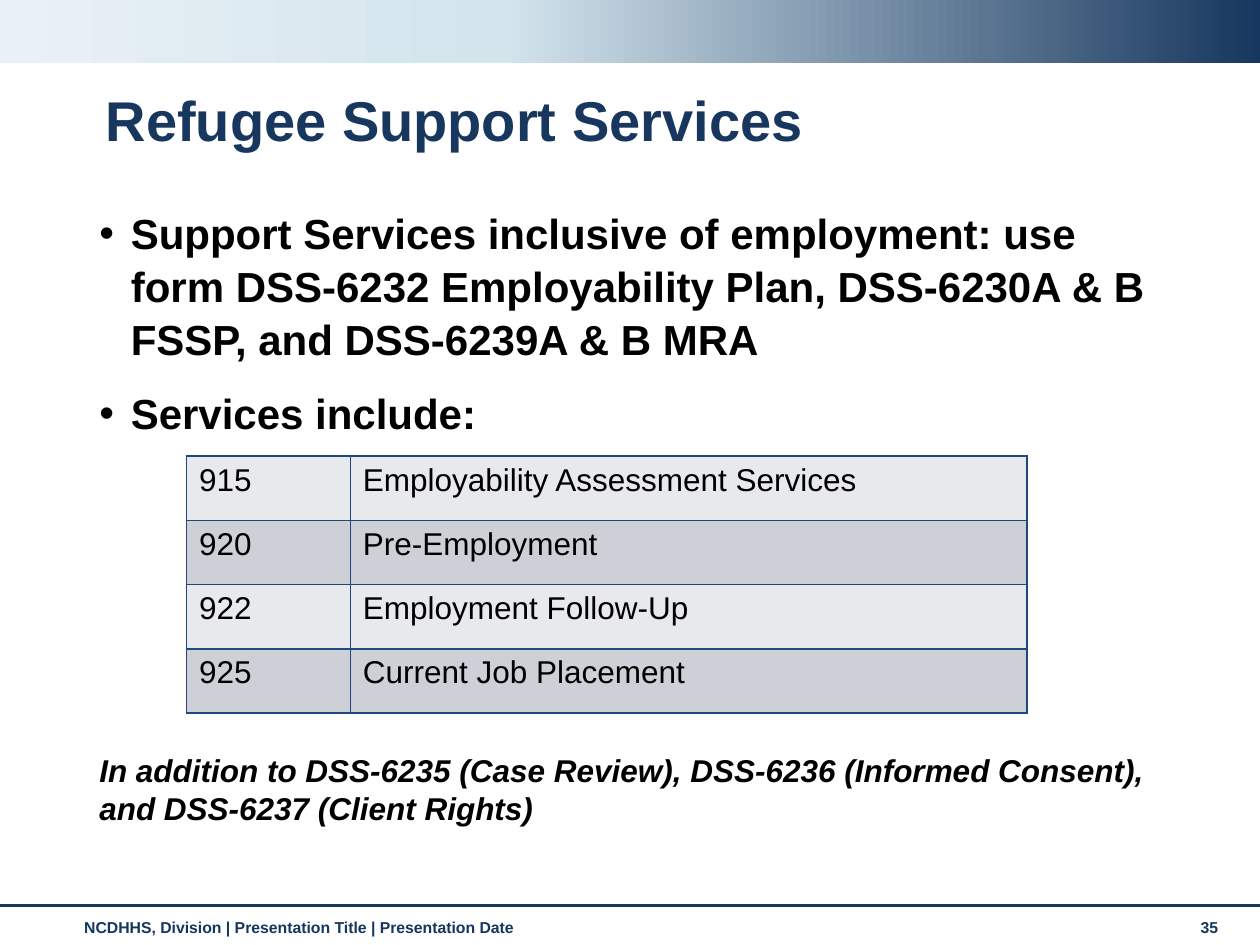
from lxml import etree
from pptx import Presentation
from pptx.dml.color import RGBColor
from pptx.enum.shapes import MSO_CONNECTOR as CONN, MSO_SHAPE as SHAPE
from pptx.enum.text import MSO_ANCHOR as ANCHOR
from pptx.oxml.ns import qn
from pptx.util import Inches, Pt

NAVY, BLACK = "17375E", "000000"
FOOTER_COLOR, BORDER = "15365E", "1F497D"
BAND_STOPS = [(0, "E9F1F6"), (40, "D3E4ED"), (100, NAVY)]
ROW_FILLS = ["E8E9EC", "CDD0D7"]

BULLETS = [
    "Support Services inclusive of employment: use form DSS-6232 "
    "Employability Plan, DSS-6230A & B FSSP, and DSS-6239A & B MRA",
    "Services include:",
]
SERVICES = [
    ("915", "Employability Assessment Services"),
    ("920", "Pre-Employment"),
    ("922", "Employment Follow-Up"),
    ("925", "Current Job Placement"),
]
NOTE = ("In addition to DSS-6235 (Case Review), DSS-6236 (Informed Consent), "
        "and DSS-6237 (Client Rights)")


def rgb(color):
    return RGBColor.from_string(color)


def inches(box):
    return [Inches(v) for v in box]


def sub(parent, tag, **attrs):
    return etree.SubElement(parent, qn(tag), attrs)


def write(p, text, color, **font):
    r = p.add_run()
    r.text = text
    r.font.color.rgb = rgb(color)
    for name, value in {"name": "Arial", **font}.items():
        setattr(r.font, name, value)


def add_text(slide, box, paragraphs, color, anchor=ANCHOR.TOP, spacing=1.0, **font):
    tf = slide.shapes.add_textbox(*inches(box)).text_frame
    tf.word_wrap = True
    tf.vertical_anchor = anchor
    for i, text in enumerate(paragraphs):
        p = tf.add_paragraph() if i else tf.paragraphs[0]
        p.line_spacing = spacing
        write(p, text, color, **font)
    return tf


def add_band(slide, box):
    sp = slide.shapes.add_shape(SHAPE.RECTANGLE, *inches(box))
    sp.shadow.inherit = False
    sp.line.fill.background()
    sp.fill.gradient()
    sp.fill.gradient_angle = 0
    stops = sp._element.spPr.find(qn("a:gradFill")).find(qn("a:gsLst"))
    for stop in list(stops):
        stops.remove(stop)
    for percent, color in BAND_STOPS:
        stop = sub(stops, "a:gs", pos=str(percent * 1000))
        sub(stop, "a:srgbClr", val=color)


def add_bullets(slide, box):
    tf = add_text(slide, box, BULLETS, BLACK, spacing=1.05, size=Pt(24), bold=True)
    indent = Inches(0.25)
    for p in tf.paragraphs:
        p.space_before = Pt(12)
        pPr = p._p.get_or_add_pPr()
        pPr.set("marL", str(indent))
        pPr.set("indent", str(-indent))
        sub(pPr, "a:buFont", typeface="Arial")
        sub(pPr, "a:buChar", char="•")


def set_borders(cell):
    tcPr = cell._tc.get_or_add_tcPr()
    for i, side in enumerate(("lnL", "lnR", "lnT", "lnB")):
        ln = etree.Element(qn(f"a:{side}"), w=str(Pt(1)))
        sub(sub(ln, "a:solidFill"), "a:srgbClr", val=BORDER)
        tcPr.insert(i, ln)  # borders come before the fill


def add_services(slide, box):
    table = slide.shapes.add_table(len(SERVICES), 2, *inches(box)).table
    table.first_row = table.horz_banding = False
    code_width = 1.3
    for column, width in zip(table.columns, (code_width, box[2] - code_width)):
        column.width = Inches(width)
    for i, service in enumerate(SERVICES):
        for cell, text in zip(table.rows[i].cells, service):
            cell.fill.solid()
            cell.fill.fore_color.rgb = rgb(ROW_FILLS[i % 2])
            set_borders(cell)
            write(cell.text_frame.paragraphs[0], text, BLACK, size=Pt(18))


def add_footer(slide, box):
    """Rule along the top of the box, with the footer text and page number below."""
    left, top, width, height = box
    rule = slide.shapes.add_connector(
        CONN.STRAIGHT, *inches((left, top, left + width, top)))
    rule.line.color.rgb = rgb(NAVY)
    rule.line.width = Pt(1.75)
    sub(rule._element.spPr, "a:effectLst")
    for x, w, text in (
        (0.57, 8.74, "NCDHHS, Division | Presentation Title | Presentation Date"),
        (9.43, 0.44, "35"),
    ):
        add_text(slide, (left + x, top + 0.03, w, height - 0.03), [text],
                 FOOTER_COLOR, ANCHOR.MIDDLE, size=Pt(9), bold=True)


def main():
    prs = Presentation()
    prs.slide_width, prs.slide_height = Inches(10), Inches(7.5)
    slide = prs.slides.add_slide(prs.slide_layouts[6])
    add_band(slide, (0, 0, 10, 0.5))
    add_footer(slide, (0, 7.19, 10, 0.31))
    add_text(slide, (0.74, 0.68, 8.58, 0.6), ["Refugee Support Services"], NAVY,
             ANCHOR.MIDDLE, spacing=0.9, size=Pt(32), bold=True)
    add_bullets(slide, (0.69, 1.58, 8.63, 1.95))
    add_services(slide, (1.48, 3.62, 6.67, 2.04))
    add_text(slide, (0.69, 5.91, 8.63, 0.9), [NOTE], BLACK,
             size=Pt(18), bold=True, italic=True)
    prs.save("out.pptx")


if __name__ == "__main__":
    main()
